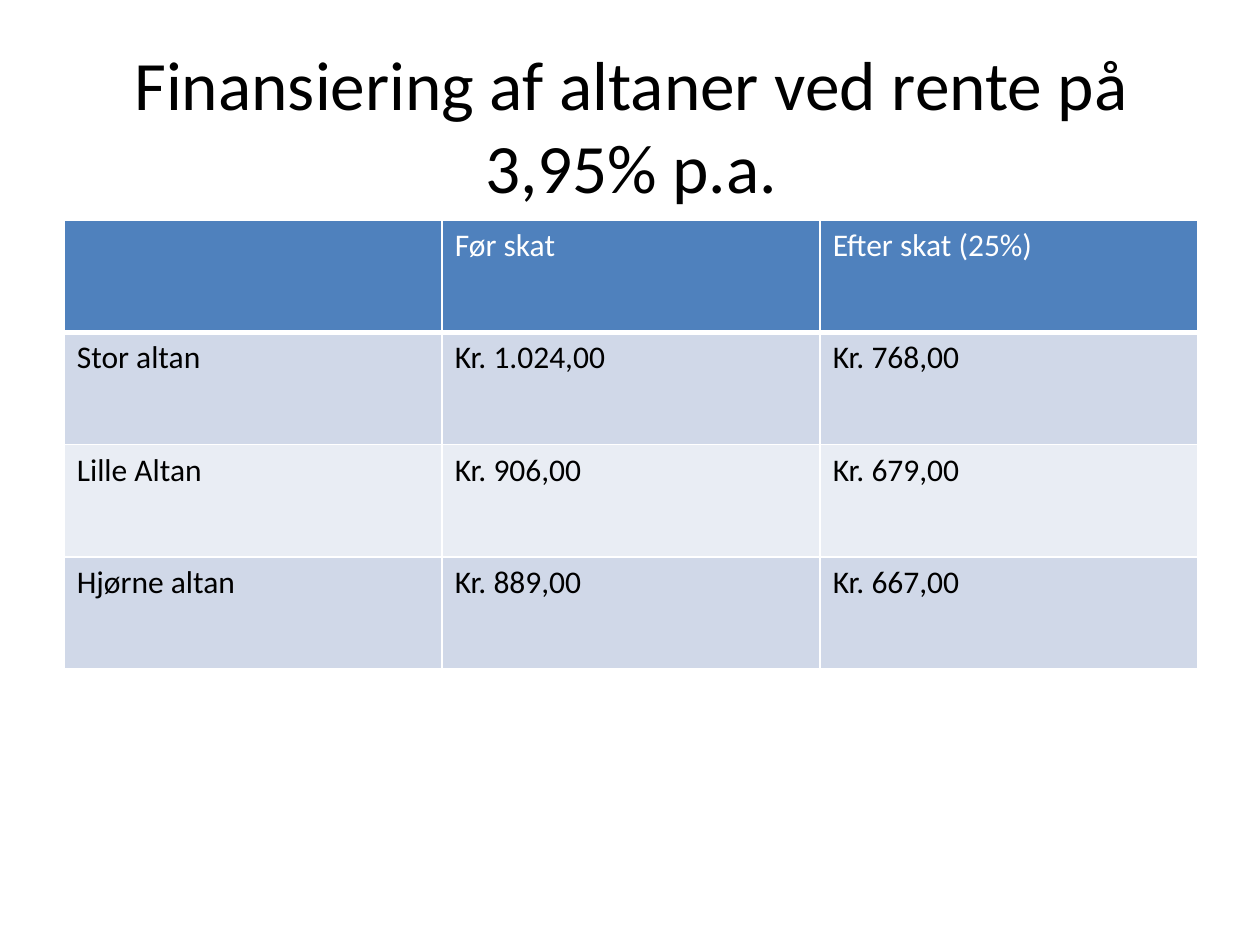
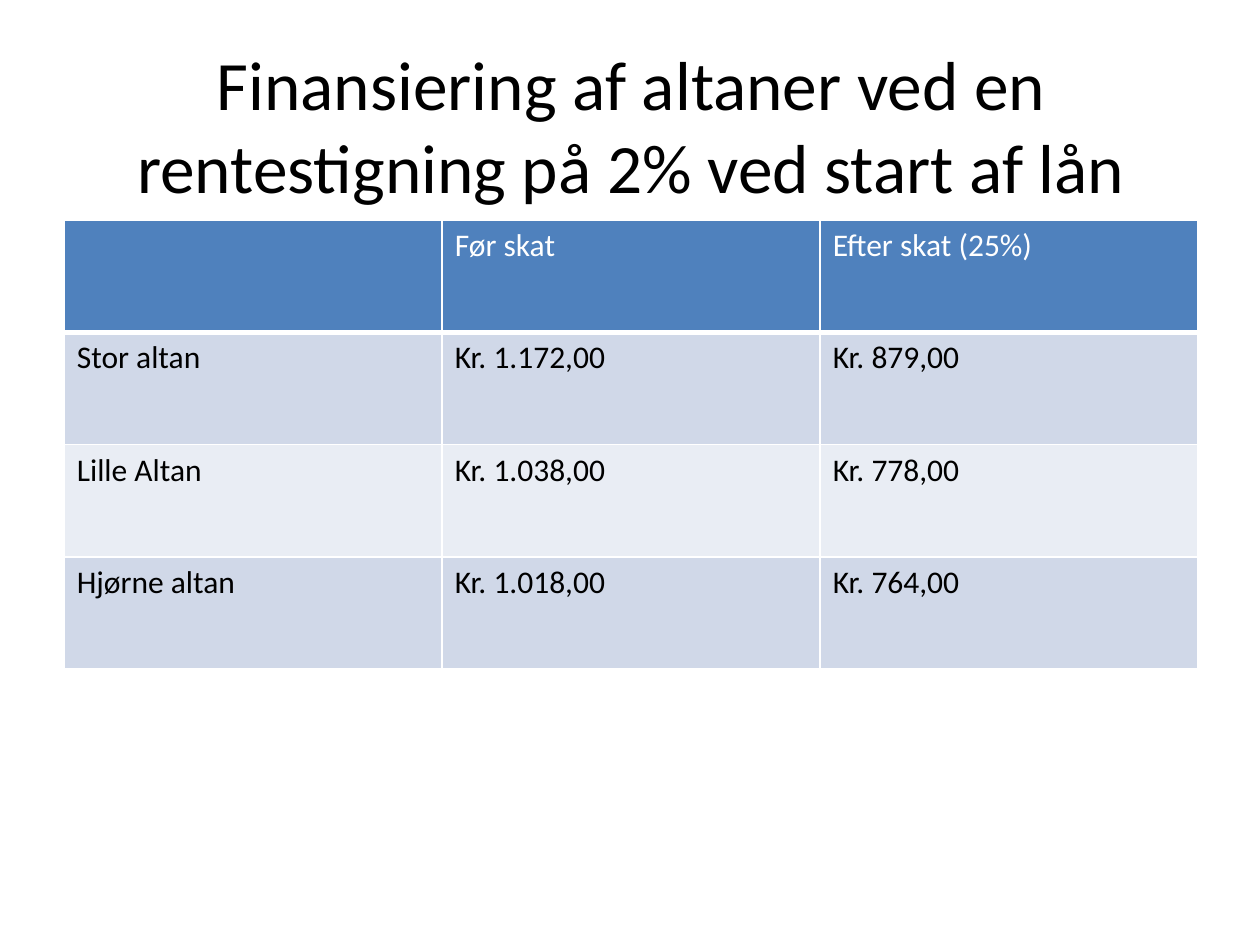
from lxml import etree
from pptx import Presentation
from pptx.dml.color import RGBColor
from pptx.enum.text import MSO_ANCHOR, MSO_AUTO_SIZE, PP_ALIGN
from pptx.oxml.ns import qn
from pptx.util import Inches, Pt

CENTER = PP_ALIGN.CENTER
MIDDLE = MSO_ANCHOR.MIDDLE
FIXED = MSO_AUTO_SIZE.NONE

FONT = "Calibri"
COLORS = {
    "text": "000000",
    "rule": "FFFFFF",
    "head": "4F81BD",
    "odd": "D0D8E8",
    "even": "E9EDF4",
}
WIDTH, HEIGHT = Inches(10), Inches(7.5)
LEFT = Inches(0.51)
COLUMN, ROW = Inches(3), Inches(0.89)

HEADS = ["", "Før skat", "Efter skat (25%)"]
SLIDES = [
    ("Finansiering af altaner ved rente på 3,95% p.a.", [
        ["Stor altan", "Kr. 1.024,00", "Kr. 768,00"],
        ["Lille Altan", "Kr. 906,00", "Kr. 679,00"],
        ["Hjørne altan", "Kr. 889,00", "Kr. 667,00"],
    ]),
    ("Finansiering af altaner ved en rentestigning på 2% ved start af lån", [
        ["Stor altan", "Kr. 1.172,00", "Kr. 879,00"],
        ["Lille Altan", "Kr. 1.038,00", "Kr. 778,00"],
        ["Hjørne altan", "Kr. 1.018,00", "Kr. 764,00"],
    ]),
]


def color(name):
    return RGBColor.from_string(COLORS[name])


def style(frame, size, tone):
    for run in frame.paragraphs[0].runs:
        run.font.name = FONT
        run.font.size = Pt(size)
        run.font.bold = False
        run.font.color.rgb = color(tone)


def add_title(slide, text):
    title = slide.shapes.title
    title.left, title.top = LEFT, Inches(0.36)
    title.width, title.height = 3 * COLUMN, Inches(1.25)
    frame = title.text_frame
    frame.text = text
    frame.word_wrap = True
    frame.auto_size = FIXED
    frame.vertical_anchor = MIDDLE
    frame.paragraphs[0].alignment = CENTER
    style(frame, 39.6, "text")


def add_rules(cell, base):
    props = cell._tc.get_or_add_tcPr()
    for side, points in (("L", 1), ("R", 1), ("T", 1), ("B", base)):
        line = etree.SubElement(props, qn(f"a:ln{side}"), w=str(Pt(points)))
        fill = etree.SubElement(line, qn("a:solidFill"))
        etree.SubElement(fill, qn("a:srgbClr"), val=COLORS["rule"])


def fill_cell(cell, text, back, tone, base):
    add_rules(cell, base)
    cell.fill.solid()
    cell.fill.fore_color.rgb = color(back)
    cell.text_frame.text = text
    style(cell.text_frame, 18, tone)


def add_prices(slide, prices):
    rows = [HEADS] + prices
    table = slide.shapes.add_table(
        len(rows), len(HEADS), LEFT, Inches(1.75),
        len(HEADS) * COLUMN, len(rows) * ROW,
    ).table
    for i, row in enumerate(rows):
        table.rows[i].height = ROW
        if i == 0:
            look = ("head", "rule", 3)
        else:
            look = ("odd" if i % 2 else "even", "text", 1)
        for j, text in enumerate(row):
            fill_cell(table.cell(i, j), text, *look)


def main():
    deck = Presentation()
    deck.slide_width, deck.slide_height = WIDTH, HEIGHT
    layout = deck.slide_layouts.get_by_name("Title Only")
    for title, prices in SLIDES:
        slide = deck.slides.add_slide(layout)
        add_title(slide, title)
        add_prices(slide, prices)
    deck.save("out.pptx")


if __name__ == "__main__":
    main()
